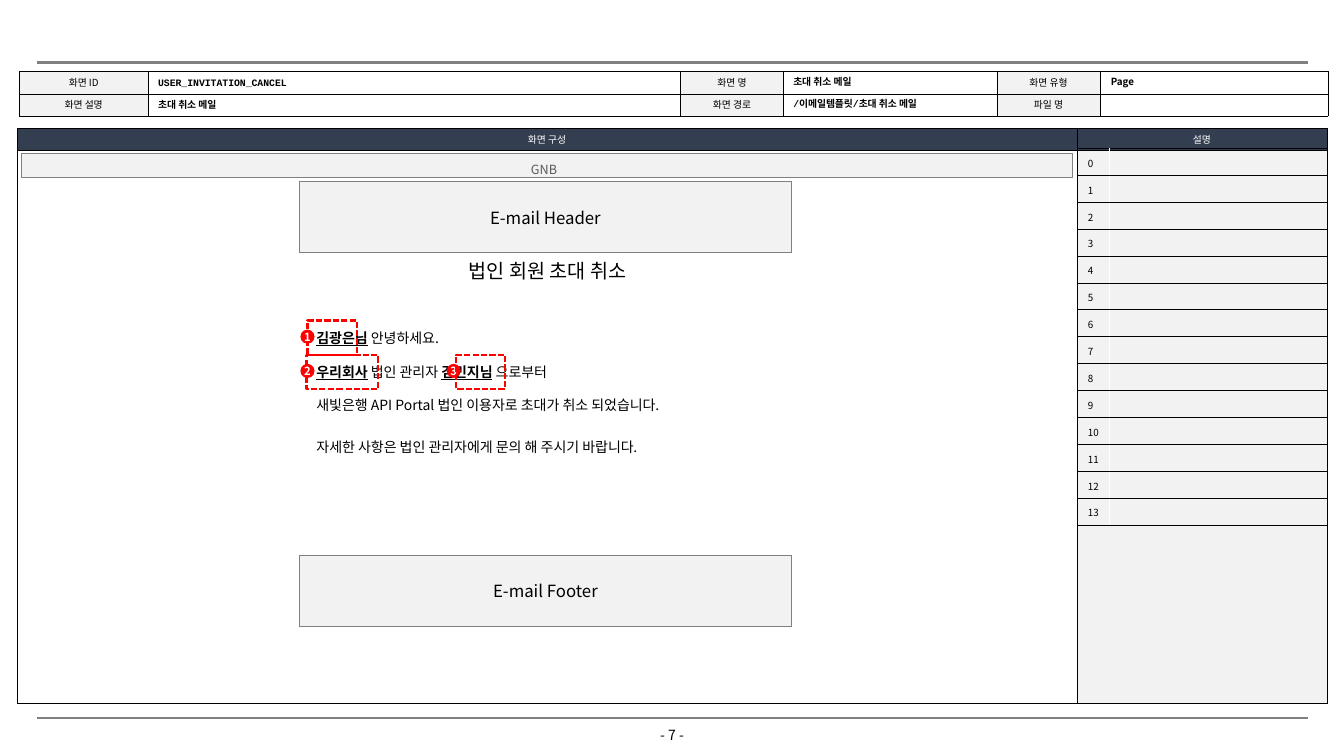
from lxml import etree
from pptx import Presentation
from pptx import util as u
from pptx.dml.color import RGBColor
from pptx.enum import dml, shapes, text
from pptx.oxml.ns import qn

SANS = "Noto Sans CJK KR"
MONO = "Courier New"
BLACK, WHITE, GRAY, PALE, NAVY, RED = "000000", "FFFFFF", "808080", "F2F2F2", "333F50", "FF0000"
CENTER, MIDDLE = text.PP_ALIGN.CENTER, text.MSO_ANCHOR.MIDDLE
NO_GRID_STYLE = "{2D5ABB26-0587-4C30-8999-92F81FD0307C}"


def color(value):
    return RGBColor.from_string(value)


def assign(target, **values):
    for name, value in values.items():
        setattr(target, name, value)


def inches(values):
    return [u.Inches(value) for value in values]


def add_span(para, words, size, tint=BLACK, face=SANS, **style):
    span = para.add_run()
    span.text = words
    assign(span.font, size=u.Pt(size), name=face, **style)
    span.font.color.rgb = color(tint)
    span.font._element.set("kern", "0")
    etree.SubElement(span.font._element, qn("a:ea"), typeface=SANS)


def set_frame(frame, margins=(0.1, 0.05, 0.1, 0.05), anchor=MIDDLE, wrap=True):
    left, top, right, bottom = inches(margins)
    assign(frame, margin_left=left, margin_top=top, margin_right=right, margin_bottom=bottom,
           vertical_anchor=anchor, word_wrap=wrap, auto_size=text.MSO_AUTO_SIZE.NONE)


def add_text(page, area, words, size, align=None, margins=(0.1, 0, 0.1, 0), **style):
    box = page.shapes.add_textbox(*inches(area))
    set_frame(box.text_frame, margins)
    para = box.text_frame.paragraphs[0]
    para.alignment = align
    add_span(para, words, size, **style)


def add_body(page, area, lines):
    box = page.shapes.add_textbox(*inches(area))
    set_frame(box.text_frame, anchor=text.MSO_ANCHOR.TOP)
    for index, line in enumerate(lines):
        para = box.text_frame.add_paragraph() if index else box.text_frame.paragraphs[0]
        if index:
            para.space_before = u.Pt(12)
        for words, marked in line:
            add_span(para, words, 10, bold=marked, underline=marked)


def add_top_rule(page):
    rule = page.shapes.add_connector(shapes.MSO_CONNECTOR.STRAIGHT, *inches((0.37, 0.62, 12.97, 0.62)))
    rule.line.color.rgb = color(GRAY)
    rule.line.width = u.Pt(1.5)
    etree.SubElement(rule._element.spPr, qn("a:effectLst"))


def add_shape(page, kind, area, fill=None, line=None, width=0.75, dash=None):
    shape = page.shapes.add_shape(kind, *inches(area))
    shape.shadow.inherit = False
    if fill:
        shape.fill.solid()
        shape.fill.fore_color.rgb = color(fill)
    else:
        shape.fill.background()
    if line:
        shape.line.color.rgb = color(line)
        assign(shape.line, width=u.Pt(width), dash_style=dash)
    else:
        shape.line.fill.background()
    return shape


def label_shape(shape, words, size, tint, spacing=1.0, margins=(0, 0, 0, 0), wrap=False, **style):
    set_frame(shape.text_frame, margins, wrap=wrap)
    para = shape.text_frame.paragraphs[0]
    assign(para, alignment=CENTER, line_spacing=spacing)
    add_span(para, words, size, tint, **style)


def add_borders(cell, borders):
    properties = cell._tc.get_or_add_tcPr()
    for side in "LRTB":
        if side in borders:
            tint, width = borders[side]
            line = etree.SubElement(properties, qn(f"a:ln{side}"), w=str(u.Pt(width)))
            fill = etree.SubElement(line, qn("a:solidFill"))
            etree.SubElement(fill, qn("a:srgbClr"), val=tint)


def add_table(page, left, top, widths, heights):
    frame = page.shapes.add_table(len(heights), len(widths),
                                  *inches((left, top, sum(widths), sum(heights))))
    table = frame.table
    assign(table, first_row=False, horz_banding=False)
    table._tbl.tblPr.find(qn("a:tableStyleId")).text = NO_GRID_STYLE
    for column, width in zip(table.columns, widths):
        column.width = u.Inches(width)
    for row, height in zip(table.rows, heights):
        row.height = u.Inches(height)
    return table


def set_cell(cell, words, borders, fill=None, size=7, tint=BLACK, align=CENTER, margin=0.03, spacing=None):
    add_borders(cell, borders)
    if fill:
        cell.fill.solid()
        cell.fill.fore_color.rgb = color(fill)
    else:
        cell.fill.background()
    assign(cell, margin_top=u.Inches(margin), margin_bottom=u.Inches(margin), vertical_anchor=MIDDLE)
    para = cell.text_frame.paragraphs[0]
    assign(para, alignment=align, line_spacing=spacing)
    if words:
        add_span(para, words, size, tint)
    else:
        etree.SubElement(para._p, qn("a:endParaRPr"), sz=str(size * 100))


def box_borders(tint, width):
    return dict.fromkeys("LRTB", (tint, width))


def add_footer_table(page):
    table = add_table(page, 0.37, 7.12, (6.3, 6.3), (0.4,))
    for cell in table.iter_cells():
        set_cell(cell, "", {"T": (GRAY, 1.5)})


def add_layout_table(page):
    table = add_table(page, 0.17, 1.27, (10.51, 2.48), (0.22, 5.49))
    borders = box_borders(BLACK, 0.25)
    for column, (heading, fill) in enumerate((("화면 구성", None), ("설명", PALE))):
        set_cell(table.cell(0, column), heading, borders, NAVY, tint=WHITE)
        set_cell(table.cell(1, column), "", borders, fill)


def add_info_table(page):
    labels = (("화면 ID", "화면 명", "화면 유형"), ("화면 설명", "화면 경로", "파일 명"))
    table = add_table(page, 0.19, 0.71, (1.28, 5.28, 1.02, 2.12, 1.02, 2.26), (0.22, 0.22))
    borders = box_borders(BLACK, 0.25)
    for row, names in enumerate(labels):
        for index, name in enumerate(names):
            set_cell(table.cell(row, 2 * index), name, borders, PALE)
            set_cell(table.cell(row, 2 * index + 1), "", borders)


def add_description_table(page):
    count = 14
    table = add_table(page, 10.69, 1.47, (0.31, 2.16), [3.74 / count] * count)
    edges = {"T": (BLACK, 0.25), "B": (BLACK, 0.25)}
    divider = (WHITE, 0.5)
    for row in range(count):
        set_cell(table.cell(row, 0), str(row), {**edges, "R": divider},
                 align=None, margin=0.05, spacing=u.Pt(12))
        set_cell(table.cell(row, 1), "", {**edges, "L": divider}, margin=0.05)


def add_banner(page, top, words):
    table = add_table(page, 2.97, top, (4.88,), (0.7,))
    set_cell(table.cell(0, 0), words, box_borders(GRAY, 0.5), PALE, size=12, margin=0.07)


def add_badge(page, left, top, number):
    badge = add_shape(page, shapes.MSO_SHAPE.OVAL, (left, top, 0.14, 0.14), RED)
    label_shape(badge, number, 8, WHITE, bold=True)


def add_marker(page, left, top, width):
    add_shape(page, shapes.MSO_SHAPE.RECTANGLE, (left, top, width, 0.34),
              line=RED, width=1.5, dash=dml.MSO_LINE.SQUARE_DOT)


def set_title(page, area, words):
    title = page.shapes.title
    left, top, width, height = inches(area)
    assign(title, left=left, top=top, width=width, height=height)
    set_frame(title.text_frame, wrap=False)
    para = title.text_frame.paragraphs[0]
    para.alignment = CENTER
    add_span(para, words, 14)


def main():
    deck = Presentation()
    assign(deck, slide_width=u.Inches(13.33), slide_height=u.Inches(7.5))
    page = deck.slides.add_slide(deck.slide_layouts[5])
    add_top_rule(page)
    add_footer_table(page)
    add_text(page, (6.12, 7.21, 1.09, 0.17), "- 7 -", 10, CENTER, (0, 0, 0, 0))
    add_layout_table(page)
    add_info_table(page)
    for area, words, face in (
        ((1.47, 0.7, 5.24, 0.24), "USER_INVITATION_CANCEL", MONO),
        ((1.47, 0.93, 5.25, 0.22), "초대 취소 메일", SANS),
        ((7.77, 0.7, 2.13, 0.21), "초대 취소 메일", SANS),
        ((7.77, 0.91, 2.13, 0.23), "/이메일템플릿/초대 취소 메일", MONO),
        ((10.92, 0.7, 2.26, 0.22), "Page", SANS),
    ):
        add_text(page, area, words, 7, face=face, bold=True)
    add_description_table(page)
    menu = add_shape(page, shapes.MSO_SHAPE.RECTANGLE, (0.21, 1.52, 10.43, 0.24), PALE, GRAY)
    label_shape(menu, "GNB", 9, "595959", 1.5, (0.04, 0.05, 0.1, 0.05), True)
    set_title(page, (4.44, 2.52, 1.98, 0.34), "법인 회원 초대 취소")
    add_body(page, (3.04, 3.22, 5.2, 0.94), (
        (("김광은님", True), (" 안녕하세요.", False)),
        (("우리회사", True), (" 법인 관리자 ", False), ("김민지님", True), (" 으로부터", False)),
        (("새빛은행 API Portal 법인 이용자로 초대가 취소 되었습니다.", False),),
    ))
    add_banner(page, 1.8, "E-mail Header")
    add_banner(page, 5.51, "E-mail Footer")
    add_body(page, (3.04, 4.3, 4.72, 0.27), ((("자세한 사항은 법인 관리자에게 문의 해 주시기 바랍니다.", False),),))
    add_badge(page, 4.43, 3.61, "3")
    add_marker(page, 3.04, 3.52, 0.71)
    add_badge(page, 2.98, 3.61, "2")
    add_marker(page, 4.52, 3.52, 0.49)
    add_marker(page, 3.05, 3.18, 0.49)
    add_badge(page, 2.98, 3.27, "1")
    deck.save("out.pptx")


if __name__ == "__main__":
    main()
